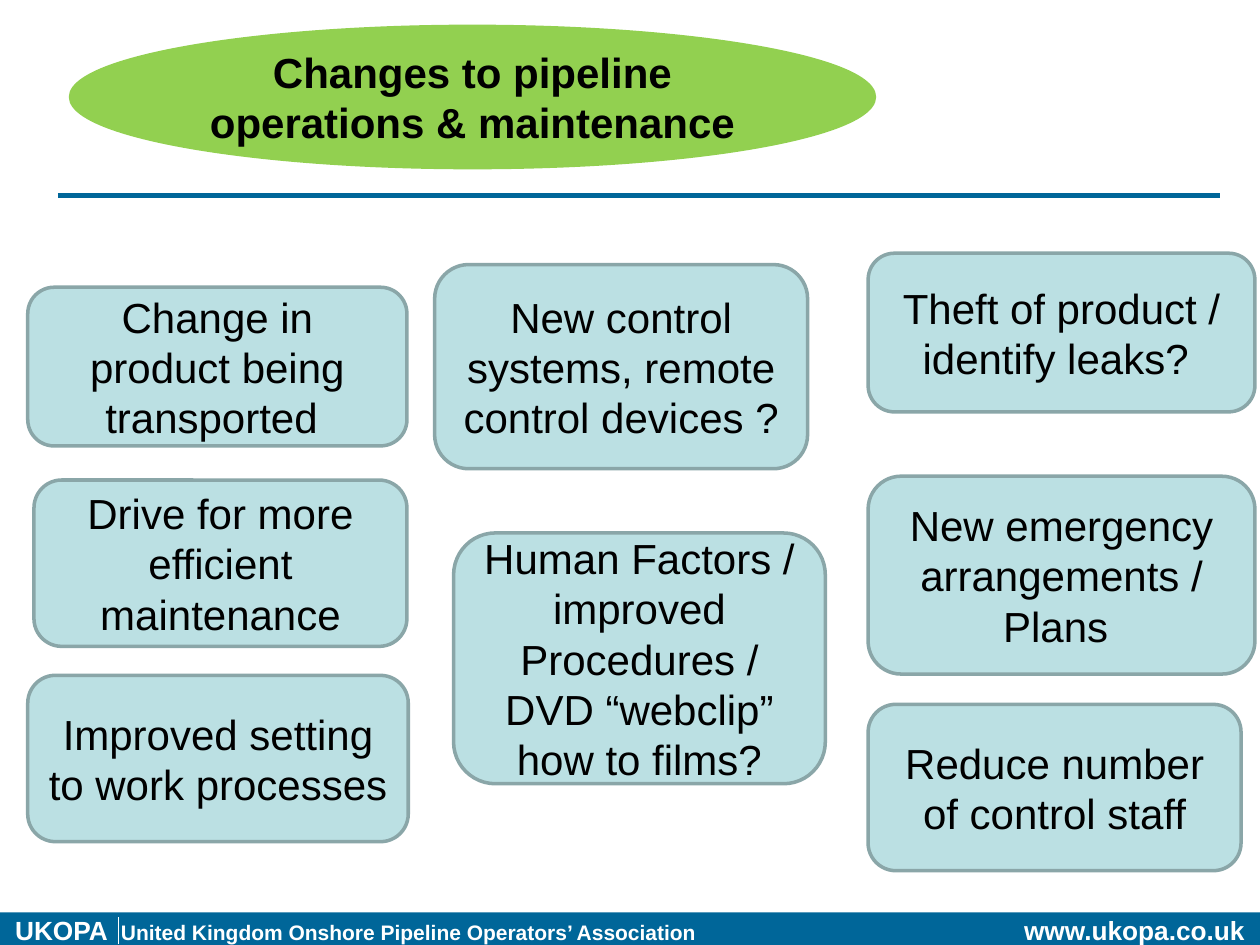
from lxml import etree
from pptx import Presentation
from pptx.dml.color import RGBColor
from pptx.enum.shapes import MSO_CONNECTOR as CONNECTOR, MSO_SHAPE as SHAPE
from pptx.enum.text import MSO_ANCHOR as ANCHOR, MSO_AUTO_SIZE as AUTO_SIZE, PP_ALIGN as ALIGN
from pptx.oxml.ns import qn
from pptx.util import Inches, Pt

BLUE = RGBColor(0x00, 0x66, 0x99)
GREEN = RGBColor(0x92, 0xD0, 0x50)
PALE_BLUE = RGBColor(0xBB, 0xE0, 0xE3)
GREY_BLUE = RGBColor(0x8A, 0xA6, 0xA8)
BLACK = RGBColor(0x00, 0x00, 0x00)
WHITE = RGBColor(0xFF, 0xFF, 0xFF)

# Left, top, width, height and paragraphs of each card, column by column
CARDS = [
    (0.22, 2.28, 3.01, 1.26, ["Change in product being transported "]),
    (0.27, 3.81, 2.96, 1.32, ["Drive for more efficient maintenance"]),
    (0.22, 5.36, 3.02, 1.32, ["Improved setting to work processes "]),
    (3.45, 2.1, 2.96, 1.62, ["New control systems, remote control devices ?"]),
    (3.6, 4.23, 2.95, 1.99,
     ["Human Factors /", "improved Procedures / DVD “webclip” how to films?"]),
    (6.89, 2.01, 3.07, 1.26, ["Theft of product / identify leaks? "]),
    (6.89, 3.78, 3.07, 1.57, ["New emergency arrangements / Plans "]),
    (6.89, 5.59, 2.96, 1.32, ["Reduce number of control staff"]),
]


def style_font(font, size, color, bold=False):
    font.name = "Arial"
    font.size = Pt(size)
    font.bold = bold
    font.color.rgb = color


def add_box(slide, kind, left, top, width, height, fill, line=None):
    shape = slide.shapes.add_shape(
        kind, Inches(left), Inches(top), Inches(width), Inches(height))
    shape.shadow.inherit = False
    shape.fill.solid()
    shape.fill.fore_color.rgb = fill
    if line is None:
        shape.line.fill.background()
    else:
        shape.line.color.rgb = line
        shape.line.width = Pt(2)
    return shape


def add_line(slide, x1, y1, x2, y2, color, width):
    line = slide.shapes.add_connector(
        CONNECTOR.STRAIGHT, Inches(x1), Inches(y1), Inches(x2), Inches(y2))
    line.line.color.rgb = color
    line.line.width = Pt(width)
    etree.SubElement(line._element.spPr, qn("a:effectLst"))


def add_heading(slide, left, top, width, height):
    ellipse = add_box(slide, SHAPE.OVAL, left, top, width, height, GREEN, GREEN)
    # Title sits inside the ellipse and in front of it
    title = slide.shapes.title
    ellipse._element.addnext(title._element)
    inset = 0.146
    title.left, title.top = Inches(left + inset * width), Inches(top)
    title.width, title.height = Inches(width * (1 - 2 * inset)), Inches(height)
    frame = title.text_frame
    frame.text = "Changes to pipeline operations & maintenance"
    frame.word_wrap = True
    frame.auto_size = AUTO_SIZE.NONE
    frame.vertical_anchor = ANCHOR.MIDDLE
    paragraph = frame.paragraphs[0]
    paragraph.alignment = ALIGN.CENTER
    style_font(paragraph.font, 24, BLACK, bold=True)


def add_card(slide, left, top, width, height, texts):
    card = add_box(slide, SHAPE.ROUNDED_RECTANGLE, left, top, width, height,
                   PALE_BLUE, GREY_BLUE)
    frame = card.text_frame
    frame.word_wrap = True
    frame.vertical_anchor = ANCHOR.MIDDLE
    frame.text = "\n".join(texts)
    for paragraph in frame.paragraphs:
        paragraph.alignment = ALIGN.CENTER
        style_font(paragraph.font, 24, BLACK)


def add_footer(slide, left, top, width, height):
    bar = add_box(slide, SHAPE.RECTANGLE, left, top, width, height, BLUE)
    margin = 0.12
    frame = bar.text_frame
    frame.word_wrap = False
    frame.vertical_anchor = ANCHOR.MIDDLE
    frame.margin_left = Inches(margin)
    frame.margin_right = frame.margin_top = frame.margin_bottom = 0
    paragraph = frame.paragraphs[0]
    paragraph.alignment = ALIGN.LEFT
    # Tabs: association name from the left, web address against the right
    tabs = etree.SubElement(paragraph._p.get_or_add_pPr(), qn("a:tabLst"))
    for position, align in ((0.84, "l"), (width - 2 * margin, "r")):
        etree.SubElement(tabs, qn("a:tab"), pos=str(Inches(position)), algn=align)
    for text, size in (
            ("UKOPA\t", 15),
            ("United Kingdom Onshore Pipeline Operators’ Association\t", 12),
            ("www.ukopa.co.uk", 15)):
        run = paragraph.add_run()
        run.text = text
        style_font(run.font, size, WHITE, bold=True)
    add_line(slide, left + 0.94, top + 0.04, left + 0.94, top + 0.25, WHITE, 1)


def main():
    presentation = Presentation()
    presentation.slide_width = Inches(10)
    presentation.slide_height = Inches(7.5)
    title_only = presentation.slide_layouts[5]
    slide = presentation.slides.add_slide(title_only)

    add_footer(slide, 0, 7.24, 10, 0.28)
    add_line(slide, 0.46, 1.55, 9.68, 1.55, BLUE, 3)
    add_heading(slide, 0.56, 0.21, 6.38, 1.12)
    for card in CARDS:
        add_card(slide, *card)

    presentation.save("out.pptx")


if __name__ == "__main__":
    main()
